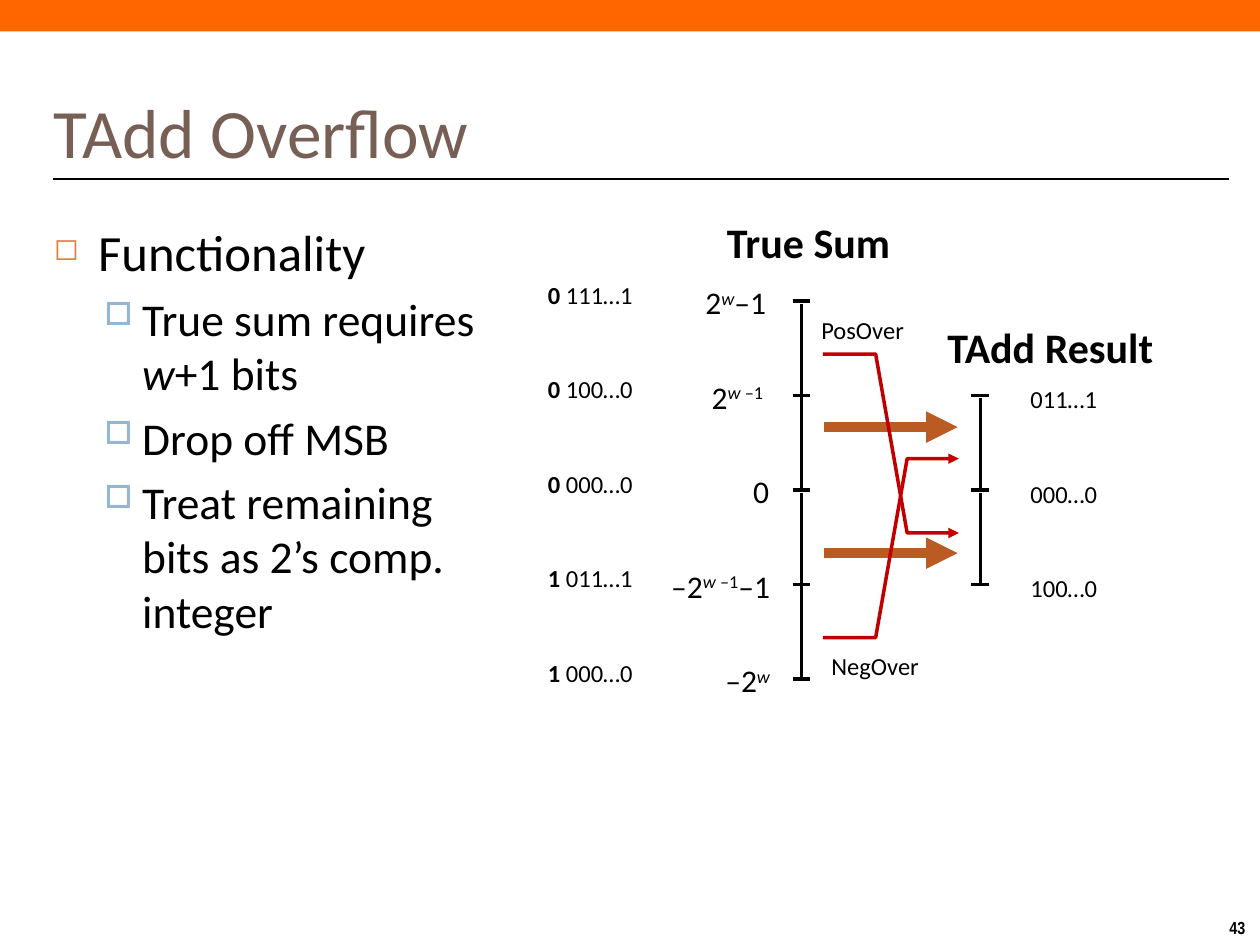
"""Build a slide on two's complement addition overflow."""
from lxml import etree
from pptx import Presentation
from pptx import util as u
from pptx.dml.color import RGBColor
from pptx.enum import shapes, text
from pptx.oxml import ns

PX = u.Inches(1) // 100
BLACK = RGBColor(0x00, 0x00, 0x00)
ORANGE = RGBColor(0xFF, 0x66, 0x00)
BROWN = RGBColor(0x77, 0x5F, 0x55)
RUST = RGBColor(0xB9, 0x5B, 0x22)
RED = RGBColor(0xC0, 0x00, 0x00)
BULLET_ORANGE = RGBColor(0xDD, 0x80, 0x47)
BULLET_BLUE = RGBColor(0x94, 0xB6, 0xD2)

presentation = Presentation()
presentation.slide_width = 1000 * PX
presentation.slide_height = 750 * PX
slide = presentation.slides.add_slide(presentation.slide_layouts[6])


def add_text(paragraphs, left, top, width, height, size=14, color=BLACK, font="Calibri",
             align=text.PP_ALIGN.LEFT, anchor=text.MSO_ANCHOR.TOP, wrap=False):
    """Add paragraphs of (text, style) runs; style letters: b bold, i italic, s superscript."""
    box = slide.shapes.add_textbox(left * PX, top * PX, width * PX, height * PX)
    frame = box.text_frame
    frame.word_wrap = wrap
    frame.auto_size = text.MSO_AUTO_SIZE.NONE if wrap else text.MSO_AUTO_SIZE.SHAPE_TO_FIT_TEXT
    frame.vertical_anchor = anchor
    for index, runs in enumerate(paragraphs):
        paragraph = frame.add_paragraph() if index else frame.paragraphs[0]
        paragraph.alignment = align
        for content, style in runs:
            run = paragraph.add_run()
            run.text = content
            run.font.name = font
            run.font.size = u.Pt(size)
            run.font.color.rgb = color
            run.font.bold = "b" in style
            run.font.italic = "i" in style
            if "s" in style:
                run.font._element.set("baseline", "30000")
    return frame


def add_line(points, color=BLACK, width=2, arrow=False):
    """Draw a straight connector through two points or an open outline through more."""
    if len(points) == 2:
        (x1, y1), (x2, y2) = points
        shape = slide.shapes.add_connector(
            shapes.MSO_CONNECTOR.STRAIGHT, x1 * PX, y1 * PX, x2 * PX, y2 * PX)
    else:
        builder = slide.shapes.build_freeform(*points[0], scale=PX)
        builder.add_line_segments(points[1:], close=False)
        shape = builder.convert_to_shape()
        shape.fill.background()
    shape.line.color.rgb = color
    shape.line.width = u.Pt(width)
    properties = shape.element.spPr
    if arrow:
        etree.SubElement(properties.find(ns.qn("a:ln")), ns.qn("a:tailEnd"), type="triangle")
    etree.SubElement(properties, ns.qn("a:effectLst"))


banner = slide.shapes.add_shape(shapes.MSO_SHAPE.RECTANGLE, 0, 0, 1001 * PX, 25 * PX)
banner.shadow.inherit = False
banner.fill.solid()
banner.fill.fore_color.rgb = ORANGE
banner.line.fill.background()
add_text([[("43", "b")]], 966, 723, 34, 27, size=10, font="Arial Narrow")
add_line([(42, 142), (975, 142)], width=1.5)
add_text([[("TAdd Overflow", "")]], 33, 73, 739, 61, size=39.6, color=BROWN,
         anchor=text.MSO_ANCHOR.MIDDLE, wrap=True)

body = add_text([
    [("Functionality", "")],
    [("True sum requires ", ""), ("w", "i"), ("+1 bits", "")],
    [("Drop off MSB", "")],
    [("Treat remaining bits as 2’s comp. integer", "")],
], 33, 170, 362, 571, size=26, wrap=True)
body.paragraphs[0].runs[0].font.size = u.Pt(29)
for index, paragraph in enumerate(body.paragraphs):
    level = min(index, 1)
    margin, indent, before, mark, percent, color = [
        (35, -35, 7, "◻", 60, BULLET_ORANGE), (70, -30, 5.5, "□", 70, BULLET_BLUE)][level]
    paragraph.level = level
    paragraph.space_before = u.Pt(before)
    properties = paragraph._p.get_or_add_pPr()
    properties.set("marL", str(margin * PX))
    properties.set("indent", str(indent * PX))
    bullet_color = etree.SubElement(properties, ns.qn("a:buClr"))
    etree.SubElement(bullet_color, ns.qn("a:srgbClr"), val=str(color))
    etree.SubElement(properties, ns.qn("a:buSzPct"), val=str(percent * 1000))
    etree.SubElement(properties, ns.qn("a:buChar"), char=mark)

STEP = 75
TOP_TICK = 239
for axis, first, last in [(636, 0, 4), (778, 1, 3)]:
    for tick in range(first, last + 1):
        y = TOP_TICK + tick * STEP
        add_line([(axis - 7, y), (axis + 7, y)])
    middle = TOP_TICK + 2 * STEP
    add_line([(axis, TOP_TICK + first * STEP + 2), (axis, middle - 1)])
    add_line([(axis, middle + 2), (axis, TOP_TICK + last * STEP - 1)])

for y in (339, 439):
    add_line([(654, y), (760, y)], color=RUST, width=6, arrow=True)
for start, end in [(281, 423), (506, 364)]:
    add_line([(653, start), (695, start), (720, end), (761, end)], color=RED, arrow=True)

sums = [
    ("0", " 111…1", 550, 70, [("2", ""), ("w", "is"), ("–1", "")]),
    ("0", " 100…0", 555, 66, [("2", ""), ("w ", "is"), ("–1", "s")]),
    ("0", " 000…0", 588, 33, [("0", "")]),
    ("1", " 011…1", 517, 104, [("–2", ""), ("w ", "is"), ("–1", "s"), ("–1", "")]),
    ("1", " 000…0", 563, 58, [("–2", ""), ("w", "is")]),
]
for row, (sign, bits, left, width, value) in enumerate(sums):
    add_text([[(sign, "b"), (bits, "")]], 425, 217 + row * STEP, 88, 33)
    add_text([value], left, 220 + row * STEP, width, 40, size=18,
             align=text.PP_ALIGN.RIGHT if row > 2 else text.PP_ALIGN.LEFT)
for row, bits in enumerate(["011…1", "000…0", "100…0"]):
    add_text([[(bits, "")]], 808, 300 + row * STEP, 73, 33)

add_text([[("True Sum", "b")]], 567, 167, 151, 50, size=24)
add_text([[("TAdd Result", "b")]], 742, 250, 185, 50, size=24)
add_text([[("PosOver", "")]], 642, 245, 86, 34)
add_text([[("NegOver", "")]], 650, 512, 90, 34)

presentation.save("out.pptx")
